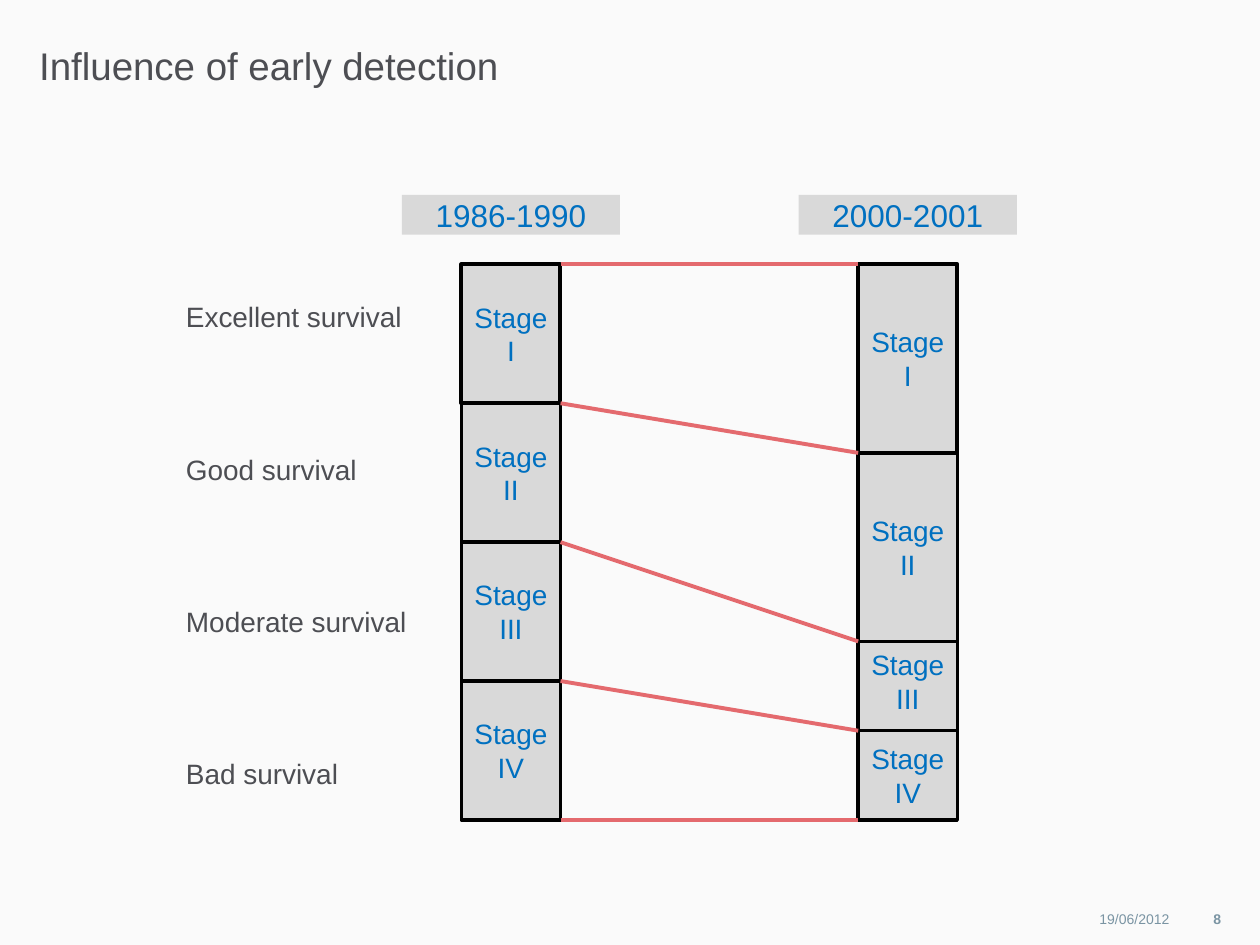
from dataclasses import dataclass

from pptx import Presentation
from pptx.dml.color import RGBColor
from pptx.enum.shapes import MSO_CONNECTOR, MSO_SHAPE
from pptx.enum.text import MSO_ANCHOR, MSO_AUTO_SIZE, PP_ALIGN
from pptx.oxml.ns import qn
from pptx.util import Cm, Pt
from lxml.etree import SubElement


@dataclass(frozen=True)
class Theme:
    font: str = "Arial"
    background: str = "FAFAFA"
    text: str = "4D4E53"
    footer: str = "7A94A3"
    panel: str = "D9D9D9"
    accent: str = "0070C0"
    outline: str = "000000"
    link: str = "E46A6E"
    title_size: int = 22
    period_size: int = 18
    body_size: int = 16
    footer_size: int = 8


THEME = Theme()

# Chart geometry in centimetres
STAGE_WIDTH = 2
CHART_TOP = 5.33
PERIOD_WIDTH = 4.4
OVERLAP = 0.2  # later Stage III reaches up behind Stage II
STAGES = ["I", "II", "III", "IV"]
EARLY = {"period": "1986-1990", "left": 9.3, "heights": [2.8, 2.8, 2.8, 2.8]}
LATE = {"period": "2000-2001", "left": 17.3, "heights": [3.8, 3.8, 1.8, 1.8]}
SURVIVAL = ["Excellent survival", "Good survival", "Moderate survival", "Bad survival"]


def rgb(value):
    return RGBColor.from_string(value)


def write(shape, text, size, color, align=PP_ALIGN.LEFT,
          anchor=MSO_ANCHOR.TOP, bold=False, margin=None):
    frame = shape.text_frame
    frame.word_wrap = True
    frame.vertical_anchor = anchor
    if margin is not None:
        frame.margin_left = frame.margin_right = Cm(margin)
        frame.margin_top = frame.margin_bottom = Cm(margin)
    para = frame.paragraphs[0]
    para.text = text
    para.alignment = align
    para.font.name = THEME.font
    para.font.size = Pt(size)
    para.font.bold = bold
    para.font.color.rgb = rgb(color)


def add_title(slide, text):
    title = slide.shapes.title
    title.left, title.top = Cm(0.79), Cm(0.84)
    title.width, title.height = Cm(19), Cm(2)
    write(title, text, THEME.title_size, THEME.text, margin=0)
    title.text_frame.auto_size = MSO_AUTO_SIZE.NONE


def add_label(slide, text, left, top, width, height, size, color, **style):
    box = slide.shapes.add_textbox(Cm(left), Cm(top), Cm(width), Cm(height))
    write(box, text, size, color, **style)
    return box


def add_panel(slide, text, left, top, width, height, size, line_width=None):
    panel = slide.shapes.add_shape(
        MSO_SHAPE.RECTANGLE, Cm(left), Cm(top), Cm(width), Cm(height))
    panel.shadow.inherit = False
    panel.fill.solid()
    panel.fill.fore_color.rgb = rgb(THEME.panel)
    if line_width:
        panel.line.color.rgb = rgb(THEME.outline)
        panel.line.width = Pt(line_width)
    else:
        panel.line.fill.background()
    write(panel, text, size, THEME.accent, PP_ALIGN.CENTER, MSO_ANCHOR.MIDDLE)


def add_link(slide, x1, y1, x2, y2):
    link = slide.shapes.add_connector(
        MSO_CONNECTOR.STRAIGHT, Cm(x1), Cm(y1), Cm(x2), Cm(y2))
    link.line.color.rgb = rgb(THEME.link)
    link.line.width = Pt(2.25)
    SubElement(link._element.spPr, qn("a:effectLst"))


def stage_edges(column):
    heights = column["heights"]
    return [CHART_TOP + sum(heights[:count]) for count in range(len(heights) + 1)]


def add_column(slide, column, overlap=0):
    left = column["left"]
    add_panel(slide, column["period"], left + (STAGE_WIDTH - PERIOD_WIDTH) / 2,
              3.93, PERIOD_WIDTH, 0.8, THEME.period_size)
    edges = stage_edges(column)
    # Bottom up, so that each stage covers the top of the one below
    for stage, top, bottom in reversed(list(zip(STAGES, edges, edges[1:]))):
        if stage == "III":
            top -= overlap
        add_panel(slide, f"Stage {stage}", left, top, STAGE_WIDTH, bottom - top,
                  THEME.body_size, 2.25 if stage == "I" else 2)


def main():
    deck = Presentation()
    deck.slide_width, deck.slide_height = Cm(25.4), Cm(19.05)
    slide = deck.slides.add_slide(deck.slide_layouts[5])
    slide.background.fill.solid()
    slide.background.fill.fore_color.rgb = rgb(THEME.background)

    add_title(slide, "Influence of early detection")

    # Date and page number
    footer = {"size": THEME.footer_size, "color": THEME.footer,
              "align": PP_ALIGN.RIGHT, "anchor": MSO_ANCHOR.MIDDLE}
    add_label(slide, "19/06/2012", 21.28, 18.15, 2.3, 0.76, margin=0, **footer)
    add_label(slide, "8", 23.65, 18.14, 1.22, 0.76, bold=True, **footer)

    # Survival labels
    for row, text in enumerate(SURVIVAL):
        box = add_label(slide, text, 3.5, 5.92 + 3.07 * row, 6.2, 0.94,
                        THEME.body_size, THEME.text)
        box.text_frame.auto_size = MSO_AUTO_SIZE.SHAPE_TO_FIT_TEXT

    # Stage columns and the shifts between them
    add_column(slide, EARLY)
    add_column(slide, LATE, OVERLAP)
    for start, end in zip(stage_edges(EARLY), stage_edges(LATE)):
        add_link(slide, EARLY["left"] + STAGE_WIDTH, start, LATE["left"], end)

    deck.save("out.pptx")


if __name__ == "__main__":
    main()
